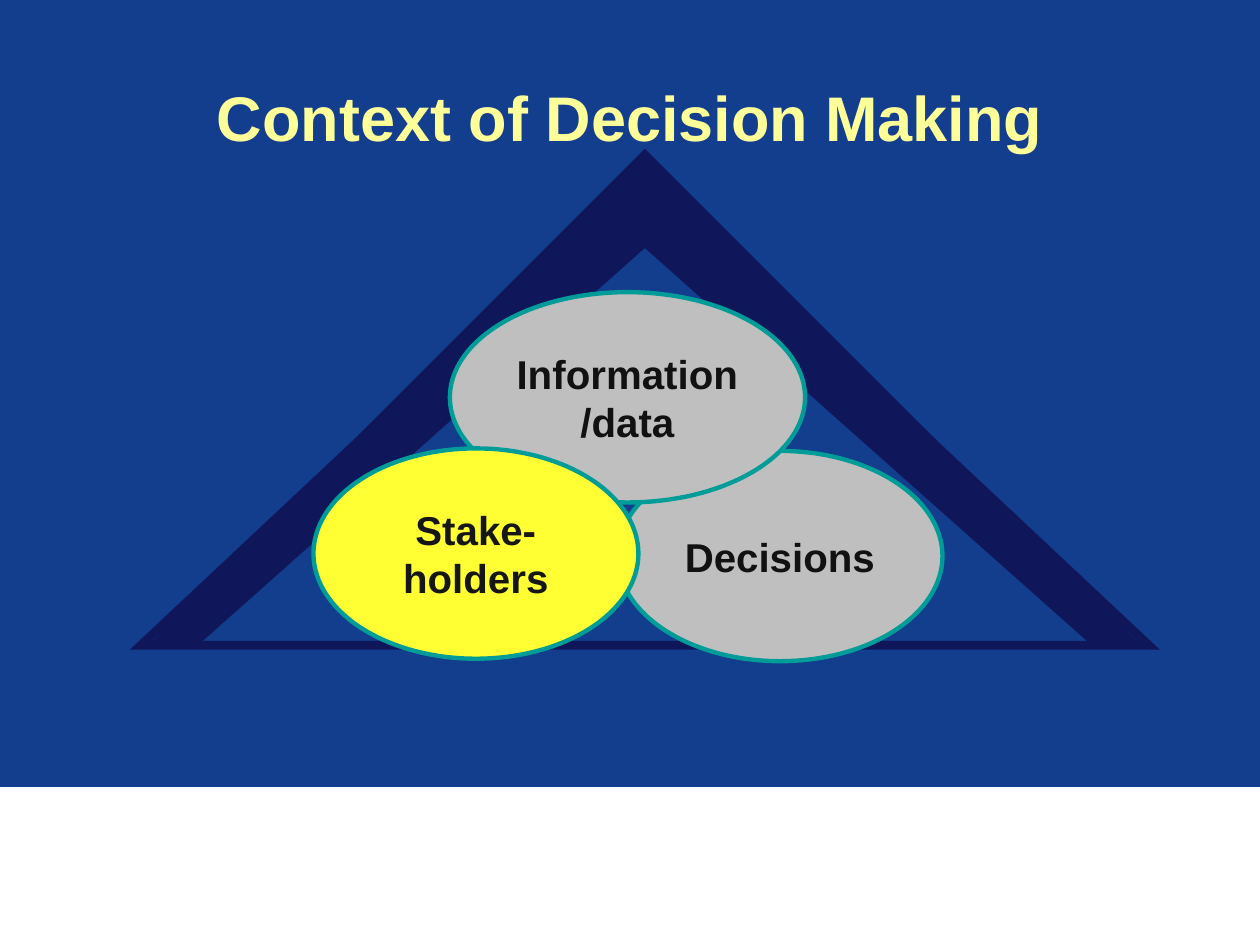
from lxml import etree
from pptx import Presentation
from pptx.dml.color import RGBColor
from pptx.enum.shapes import MSO_SHAPE as Shape
from pptx.enum.text import MSO_ANCHOR as Anchor, PP_ALIGN as Align
from pptx.oxml.ns import qn
from pptx.util import Cm, Pt

FRAME_COLOR = "0F165A"
BASE_COLOR = "0B1045"
GREY = "BFBFBF"
YELLOW = "FFFF33"


def color(value):
    """Turn a hex string into a colour."""
    return RGBColor.from_string(value)


def paint(shape, fill=None, line=None, width=0.75):
    """Set fill and outline, and remove the shadow."""
    shape.shadow.inherit = False
    if fill:
        shape.fill.solid()
        shape.fill.fore_color.rgb = color(fill)
    else:
        shape.fill.background()
    if line:
        shape.line.color.rgb = color(line)
        shape.line.width = Pt(width)
    else:
        shape.line.fill.background()


def write(shape, text, size, font_color):
    """Write one bold centred paragraph into a shape."""
    frame = shape.text_frame
    frame.word_wrap = True
    frame.vertical_anchor = Anchor.MIDDLE
    frame.text = text
    paragraph = frame.paragraphs[0]
    paragraph.alignment = Align.CENTER
    font = paragraph.font
    font.name, font.size, font.bold = "Arial", Pt(size), True
    font.color.rgb = color(font_color)


def add_title(slide, text, left, top, width, height):
    """Place and format the title placeholder."""
    title = slide.shapes.title
    title.left, title.top = Cm(left), Cm(top)
    title.width, title.height = Cm(width), Cm(height)
    write(title, text, 36, "FFFF99")


def add_footer_band(slide, left, top, width, height):
    """Add the white band at the foot of the slide."""
    band = slide.shapes.add_shape(Shape.RECTANGLE, Cm(left), Cm(top), Cm(width), Cm(height))
    paint(band, "FFFFFF", "FFFFFF")


def add_outline(slide, fill, *contours):
    """Add a filled freeform made of closed contours."""
    builder = None
    for start, *others in contours:
        if builder is None:
            builder = slide.shapes.build_freeform(*start, scale=Cm(1))
        else:
            builder.move_to(*start)
        builder.add_line_segments(others, close=True)
    paint(builder.convert_to_shape(), fill)


def add_triangle_frame(slide, left, top, width, height):
    """Add the solid triangular frame with its base face."""
    right, bottom, middle = left + width, top + height, left + width / 2
    corner_left, corner_right, edge = left - 0.26, right + 0.26, bottom + 0.11
    outer = [(middle, top - 0.09), (corner_right, edge), (corner_left, edge)]
    inner = [(middle, top + 1.2), (left + 1.33, bottom - 0.09), (right - 1.33, bottom - 0.09)]
    base = [(corner_left, edge), (corner_right, edge),
            (right - 0.55, bottom + 0.4), (left + 0.55, bottom + 0.4)]
    add_outline(slide, FRAME_COLOR, outer, inner)
    add_outline(slide, BASE_COLOR, base)
    triangle = slide.shapes.add_shape(Shape.ISOSCELES_TRIANGLE, Cm(left), Cm(top), Cm(width), Cm(height))
    paint(triangle, line=FRAME_COLOR, width=5)
    outline = triangle.line._get_or_add_ln()
    etree.SubElement(outline, qn("a:miter"), lim="800000")


def add_factor(slide, text, fill, font_color, left, top, width, height):
    """Add one labelled ellipse."""
    ellipse = slide.shapes.add_shape(Shape.OVAL, Cm(left), Cm(top), Cm(width), Cm(height))
    paint(ellipse, fill, "009C98", 2.5)
    write(ellipse, text, 23, font_color)


def main():
    """Build and save the slide."""
    presentation = Presentation()
    presentation.slide_width, presentation.slide_height = Cm(25.4), Cm(19.05)
    slide = presentation.slides.add_slide(presentation.slide_layouts[5])
    slide.background.fill.solid()
    slide.background.fill.fore_color.rgb = color("133D8D")
    add_footer_band(slide, 0, 15.88, 25.4, 3.17)
    add_title(slide, "Context of Decision Making", 1.9, 0.76, 21.6, 3.18)
    add_triangle_frame(slide, 2.84, 3.48, 20.32, 9.53)
    add_factor(slide, "Decisions", GREY, "111111", 12.45, 9.09, 6.55, 4.24)
    add_factor(slide, "Information/data", GREY, "111111", 9.07, 5.89, 7.16, 4.24)
    add_factor(slide, "Stake-holders", YELLOW, "161616", 6.32, 9.04, 6.55, 4.24)
    presentation.save("out.pptx")


if __name__ == "__main__":
    main()
